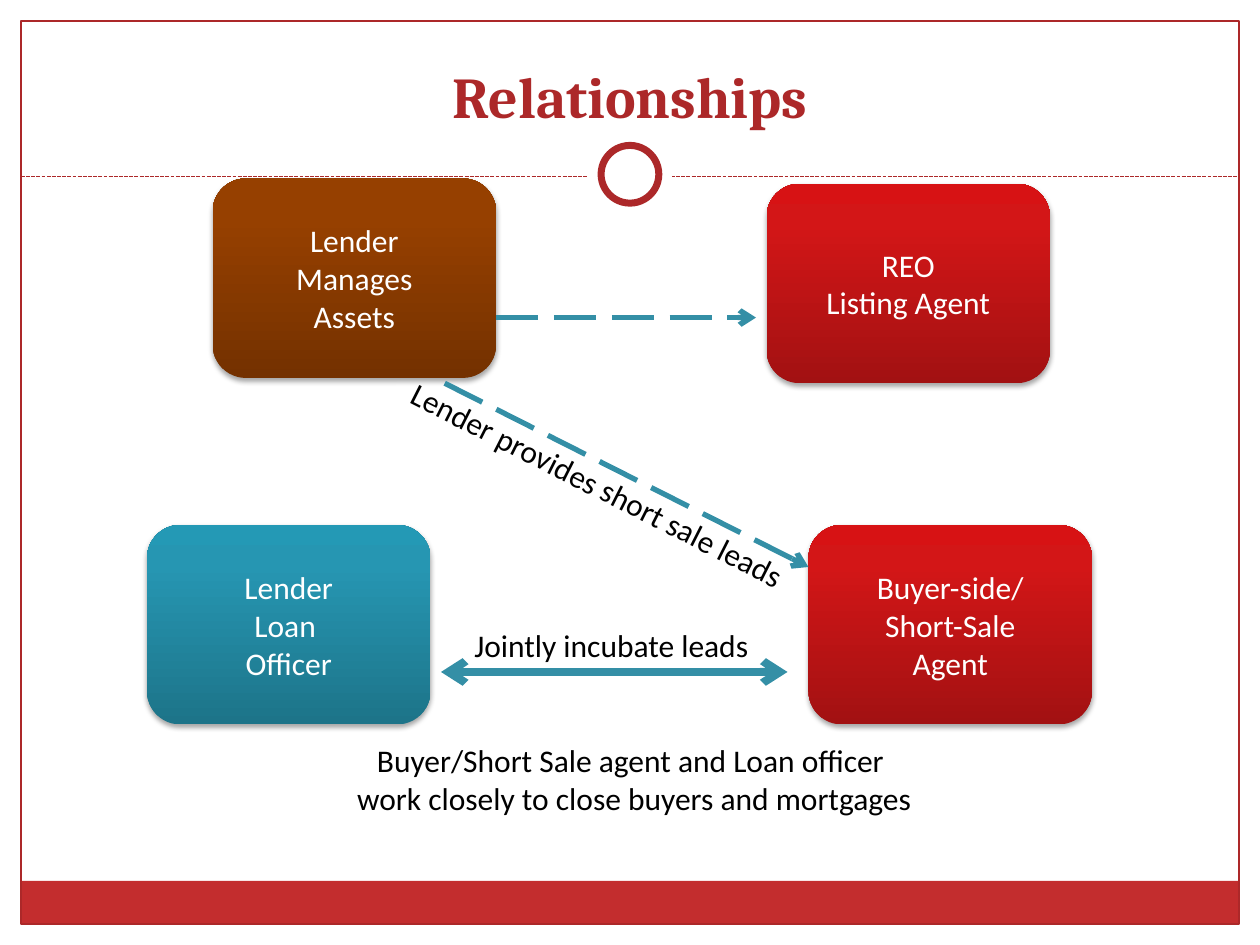
from lxml import etree
from pptx import Presentation
from pptx.dml.color import RGBColor
from pptx.enum.dml import MSO_LINE
from pptx.enum.shapes import MSO_CONNECTOR, MSO_SHAPE
from pptx.enum.text import MSO_ANCHOR, PP_ALIGN
from pptx.oxml import parse_xml
from pptx.oxml.ns import nsdecls, qn
from pptx.util import Inches, Pt

RECT, ROUND, OVAL = MSO_SHAPE.RECTANGLE, MSO_SHAPE.ROUNDED_RECTANGLE, MSO_SHAPE.OVAL
STRAIGHT = MSO_CONNECTOR.STRAIGHT
FINE_DASH, LONG_DASH = MSO_LINE.SQUARE_DOT, MSO_LINE.LONG_DASH
LEFT, CENTER = PP_ALIGN.LEFT, PP_ALIGN.CENTER
TOP, MIDDLE, BOTTOM = MSO_ANCHOR.TOP, MSO_ANCHOR.MIDDLE, MSO_ANCHOR.BOTTOM

WIDTH, HEIGHT = Inches(10), Inches(7.5)
COLUMNS, ROWS = 120, 90
COLORS = {"white": "FFFFFF", "black": "000000", "band": "C32D2E",
          "accent": "AC2829", "arrow": "348FA6"}
GRADIENTS = {"brown": ("743100", "964000", "974100"),
             "red": ("A21112", "D31617", "D71214"),
             "teal": ("1D7489", "2696B2", "2499B5")}
STOPS = (0, 80, 100)
BODY = {"name": "Calibri", "size": Pt(18)}
HEADING = {"name": "Cambria", "size": Pt(33), "bold": True}


def rgb(name):
    """Return the named colour."""
    return RGBColor.from_string(COLORS[name])


def grid(box, *cells):
    """Turn alternating columns and rows within a box into lengths."""
    steps = (box[2] / COLUMNS, box[3] / ROWS)
    return [round(n * steps[i % 2]) + (box[i] if i < 2 else 0)
            for i, n in enumerate(cells)]


def add_panel(slide, kind, at, fill=None, line=None, weight=0.75):
    """Add a plain shape with an optional fill and outline."""
    s = slide.shapes.add_shape(kind, *at)
    s.shadow.inherit = False
    if fill:
        s.fill.solid()
        s.fill.fore_color.rgb = rgb(fill)
    else:
        s.fill.background()
    if line:
        s.line.color.rgb = rgb(line)
        s.line.width = Pt(weight)
    else:
        s.line.fill.background()
    return s


def add_line(slide, at, color, weight, dash=None, ends=()):
    """Add a straight connector with optional dash and arrowheads."""
    s = slide.shapes.add_connector(STRAIGHT, *at)
    s.line.color.rgb = rgb(color)
    s.line.width = Pt(weight)
    if dash:
        s.line.dash_style = dash
    ln = s.line._get_or_add_ln()
    for end in ends:
        etree.SubElement(ln, qn(f"a:{end}"), type="arrow")
    etree.SubElement(s._element.spPr, qn("a:effectLst"))


def write(tf, text, font, color, align=CENTER, anchor=TOP, wrap=False):
    """Write one formatted paragraph into a text frame."""
    tf.word_wrap = wrap
    tf.vertical_anchor = anchor
    p = tf.paragraphs[0]
    p.text = text
    p.alignment = align
    for r in p.runs:
        r.font.color.rgb = rgb(color)
        for name, value in font.items():
            setattr(r.font, name, value)


def add_role(slide, at, text, gradient):
    """Add a rounded role box with a gradient and a soft shadow."""
    s = add_panel(slide, ROUND, at)
    stops = "".join(f'<a:gs pos="{pos * 1000}"><a:srgbClr val="{color}"/></a:gs>'
                    for pos, color in zip(STOPS, GRADIENTS[gradient]))
    fill = parse_xml(f'<a:gradFill {nsdecls("a")} rotWithShape="1"><a:gsLst>{stops}</a:gsLst>'
                     '<a:lin ang="16200000" scaled="0"/></a:gradFill>')
    shadow = parse_xml(f'<a:outerShdw {nsdecls("a")} blurRad="{Pt(3.1)}" dist="{Pt(1.8)}" '
                       'dir="5400000" rotWithShape="0"><a:srgbClr val="000000">'
                       '<a:alpha val="35000"/></a:srgbClr></a:outerShdw>')
    spPr = s._element.spPr
    spPr.replace(spPr.find(qn("a:noFill")), fill)
    spPr.find(qn("a:effectLst")).append(shadow)
    write(s.text_frame, text, BODY, "white", anchor=MIDDLE, wrap=True)


def add_frame(slide, box):
    """Draw the page border, bottom band, divider and ring."""
    for cells in ((0, 0, 120, 18.2), (0, 0, 2, 90), (118, 0, 2, 90)):
        add_panel(slide, RECT, grid(box, *cells), "white")
    add_panel(slide, RECT, grid(box, 2, 83.9, 116, 4.1), "band")
    add_panel(slide, RECT, grid(box, 2, 2, 116, 86), line="accent")
    add_line(slide, grid(box, 2, 16.8, 118, 16.8), "accent", 0.75, FINE_DASH)
    add_panel(slide, OVAL, grid(box, 56, 12.6, 8, 8), "white")
    add_panel(slide, OVAL, grid(box, 57.25, 13.85, 5.5, 5.5), "white", "accent", 4)


def add_title(slide, box):
    """Add the heading above the divider."""
    tf = slide.shapes.add_textbox(*grid(box, 4, 3, 112, 10)).text_frame
    write(tf, "Relationships", HEADING, "accent", anchor=BOTTOM, wrap=True)


def add_diagram(slide, box):
    """Draw the four roles, their arrows and the captions."""
    roles = (
        (20.25, 17, "Lender\nManages\nAssets", "brown"),
        (73, 17.5, "REO\nListing Agent", "red"),
        (77, 50, "Buyer-side/\nShort-Sale\nAgent", "red"),
        (14, 50, "Lender\nLoan \nOfficer", "teal"),
    )
    arrows = (
        ((47.25, 30.25, 72, 30.25), 3, LONG_DASH, ("tailEnd",)),
        ((42.35, 36.5, 77, 54), 3, LONG_DASH, ("tailEnd",)),
        ((42, 64, 75, 64), 4.5, None, ("headEnd", "tailEnd")),
    )
    captions = (
        ((36.1, 43.9, 42, 4.8), "Lender provides short sale leads", LEFT, 27),
        ((32.5, 70, 55.8, 8.5), "Buyer/Short Sale agent and Loan officer \n"
         "work closely to close buyers and mortgages", CENTER, 0),
        ((44, 59, 28.8, 4.8), "Jointly incubate leads", LEFT, 0),
    )
    for column, row, text, gradient in roles:
        add_role(slide, grid(box, column, row, 27, 19), text, gradient)
    for cells, weight, dash, ends in arrows:
        add_line(slide, grid(box, *cells), "arrow", weight, dash, ends)
    for cells, text, align, angle in captions:
        s = slide.shapes.add_textbox(*grid(box, *cells))
        s.rotation = angle
        write(s.text_frame, text, BODY, "black", align)


def main():
    """Build and save the slide."""
    prs = Presentation()
    prs.slide_width, prs.slide_height = WIDTH, HEIGHT
    slide = prs.slides.add_slide(prs.slide_layouts[6])
    page = (0, 0, WIDTH, HEIGHT)
    for add_region in (add_frame, add_diagram, add_title):
        add_region(slide, page)
    prs.save("out.pptx")


if __name__ == "__main__":
    main()
